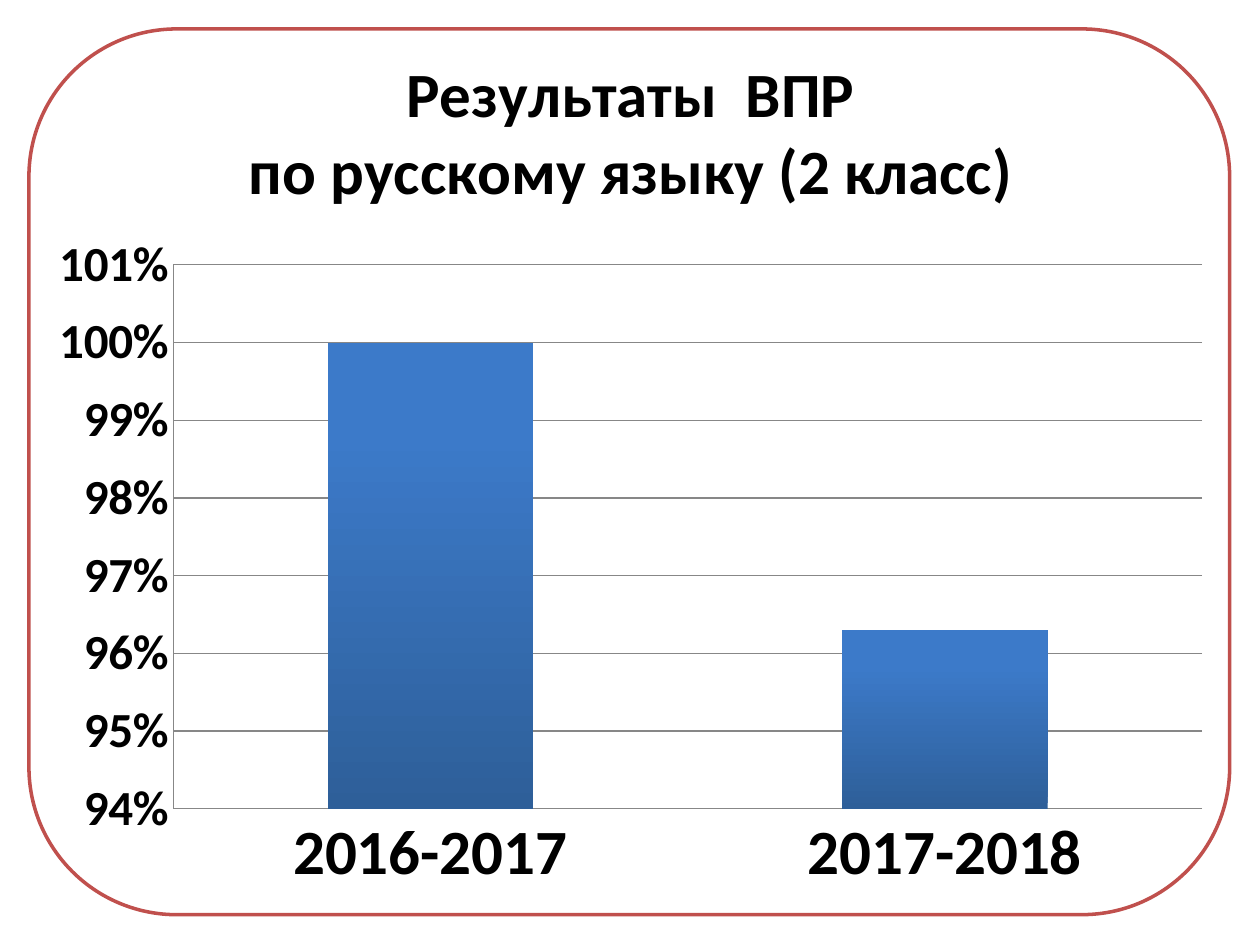
from dataclasses import dataclass
from lxml.etree import SubElement
from pptx import Presentation
from pptx.chart.data import CategoryChartData
from pptx.dml.color import RGBColor
from pptx.enum.chart import XL_CHART_TYPE, XL_TICK_MARK
from pptx.enum.shapes import MSO_SHAPE
from pptx.oxml.ns import qn
from pptx.util import Inches, Pt


@dataclass(frozen=True)
class Theme:
    face: str = "Calibri"
    ink: RGBColor = RGBColor(0, 0, 0)
    paper: RGBColor = RGBColor(255, 255, 255)
    edge: RGBColor = RGBColor.from_string("C0504D")
    grid: RGBColor = RGBColor.from_string("878787")
    deep: RGBColor = RGBColor.from_string("2E5F99")
    light: RGBColor = RGBColor.from_string("3C7AC9")
    title: Pt = Pt(36)
    years: Pt = Pt(36)
    scale: Pt = Pt(28)


THEME = Theme()
TITLE = ("Результаты  ВПР", "по русскому языку (2 класс)")
RATES = {"2016-2017": 1, "2017-2018": 0.963}


def apply(item, style):
    for name, value in style.items():
        setattr(item, name, value)


def style_font(font, size):
    apply(font, {"name": THEME.face, "size": size, "bold": True})
    font.color.rgb = THEME.ink


def style_line(line, color, width):
    line.color.rgb = color
    line.width = width


def pin(parent, place):
    """Fix a chart part at fractions of the chart's box."""
    layout = parent.find(qn("c:layout"))
    if layout is None:
        layout = SubElement(parent, qn("c:layout"))
        parent.insert(0, layout)
    manual = SubElement(layout, qn("c:manualLayout"))
    for name, value in place.items():
        SubElement(manual, qn(f"c:{name}")).set("val", str(value))


def add_frame(slide, box):
    frame = slide.shapes.add_shape(MSO_SHAPE.ROUNDED_RECTANGLE, *box)
    frame.shadow.inherit = False
    frame.fill.solid()
    frame.fill.fore_color.rgb = THEME.paper
    style_line(frame.line, THEME.edge, Pt(2))


def set_title(chart):
    chart.has_title = True
    title = chart.chart_title
    title.include_in_layout = False
    frame = title.text_frame
    frame.text = "\n".join(TITLE)
    for para in frame.paragraphs:
        style_font(para.font, THEME.title)
        for run in para.runs:
            style_font(run.font, THEME.title)


def set_axes(chart):
    axes = ((chart.category_axis, THEME.years),
            (chart.value_axis, THEME.scale))
    for axis, size in axes:
        apply(axis, {"major_tick_mark": XL_TICK_MARK.NONE,
                     "minor_tick_mark": XL_TICK_MARK.NONE})
        style_font(axis.tick_labels.font, size)
        style_line(axis.format.line, THEME.grid, Pt(0.75))
    rates = chart.value_axis
    apply(rates, {"minimum_scale": 0.94, "maximum_scale": 1.01,
                  "major_unit": 0.01, "has_major_gridlines": True})
    apply(rates.tick_labels, {"number_format": "0%",
                              "number_format_is_linked": False})
    style_line(rates.major_gridlines.format.line, THEME.grid, Pt(0.75))


def set_bars(chart):
    plot = chart.plots[0]
    apply(plot, {"gap_width": 150, "vary_by_categories": False})
    fill = plot.series[0].format.fill
    fill.gradient()
    fill.gradient_angle = 90
    stops = ((0, THEME.deep), (0.8, THEME.light))
    for stop, (place, color) in zip(fill.gradient_stops, stops):
        stop.position = place
        stop.color.rgb = color


def add_rates(slide, box):
    data = CategoryChartData(number_format="0.0%")
    data.categories = list(RATES)
    data.add_series("Series 1", list(RATES.values()))
    kind = XL_CHART_TYPE.COLUMN_CLUSTERED
    chart = slide.shapes.add_chart(kind, *box, data).chart
    chart.has_legend = False
    set_title(chart)
    set_axes(chart)
    set_bars(chart)
    area = chart.plots[0]._element.getparent()
    pin(area, {"layoutTarget": "inner", "xMode": "edge", "yMode": "edge",
               "x": 0.116, "y": 0.27, "w": 0.864, "h": 0.616})


def main():
    deck = Presentation()
    apply(deck, {"slide_width": Inches(10), "slide_height": Inches(7.5)})
    slide = deck.slides.add_slide(deck.slide_layouts[6])
    add_frame(slide, [Inches(n) for n in (0.23, 0.23, 9.53, 7.03)])
    add_rates(slide, [Inches(n) for n in (0.28, 0.21, 9.45, 7.01)])
    deck.save("out.pptx")


if __name__ == "__main__":
    main()
